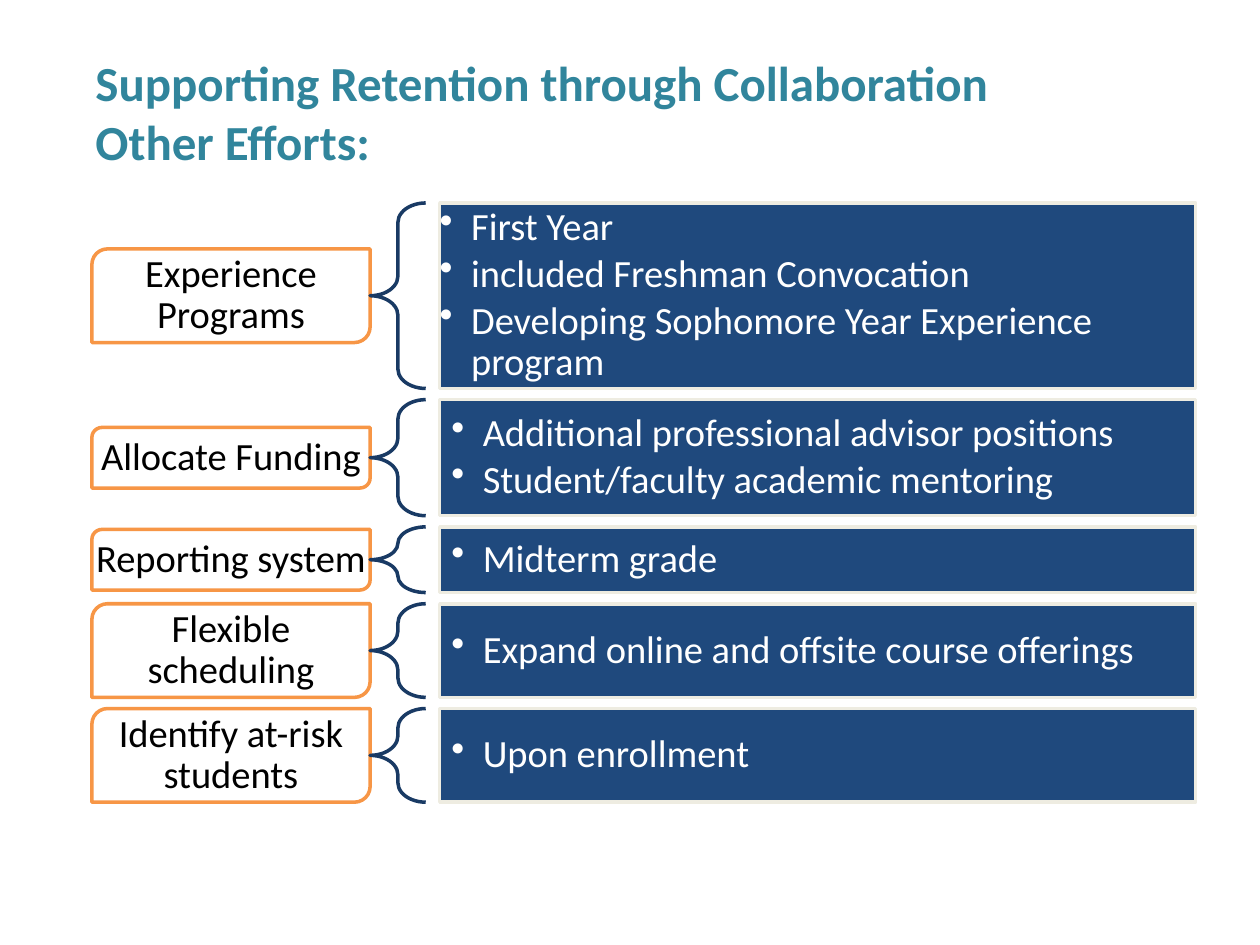
from lxml import etree
from pptx import Presentation
from pptx.dml.color import RGBColor
from pptx.enum.shapes import MSO_SHAPE
from pptx.enum.text import MSO_ANCHOR, PP_ALIGN
from pptx.oxml.ns import qn
from pptx.util import Pt

LABEL, BRACE, BOX = MSO_SHAPE.ROUND_2_DIAG_RECTANGLE, MSO_SHAPE.LEFT_BRACE, MSO_SHAPE.RECTANGLE
TOP, MIDDLE = MSO_ANCHOR.TOP, MSO_ANCHOR.MIDDLE
LEFT, CENTER = PP_ALIGN.LEFT, PP_ALIGN.CENTER

FONT = "Calibri"
COLORS = {"title": "31859C", "white": "FFFFFF", "black": "000000", "orange": "F79646",
          "brace": "193A64", "navy": "1F497D", "cream": "EEECE1"}

TITLE = ["Supporting Retention through Collaboration", "Other Efforts:"]
# label, label height, row height, box inset, bullets
EFFORTS = [
    ("Experience Programs", 53.5, 106, 0,
     ["First Year", "included Freshman Convocation",
      "Developing Sophomore Year Experience program"]),
    ("Allocate Funding", 34.6, 66.3, 6.6,
     ["Additional professional advisor positions", "Student/faculty academic mentoring"]),
    ("Reporting system", 34.6, 37.5, 6.6, ["Midterm grade"]),
    ("Flexible scheduling", 53.5, 53.5, 6.6, ["Expand online and offsite course offerings"]),
    ("Identify at-risk students", 53.5, 53.5, 6.6, ["Upon enrollment"]),
]
ROWS_TOP, ROW_GAP = 116, 6.4
LABEL_X, LABEL_W = 52.5, 159
BRACE_X, BRACE_W = LABEL_X + LABEL_W, 31.8
BOX_X, BOX_W = 251.3, 432


def rgb(name):
    return RGBColor.from_string(COLORS[name])


def add_outlined(kind, x, y, w, h, line, fill=None):
    sp = slide.shapes.add_shape(kind, Pt(x), Pt(y), Pt(w), Pt(h))
    sp.shadow.inherit = False
    if fill:
        sp.fill.solid()
        sp.fill.fore_color.rgb = rgb(fill)
    else:
        sp.fill.background()
    sp.line.color.rgb = rgb(line)
    sp.line.width = Pt(2)
    return sp


def add_bullet(p):
    pPr = p._p.get_or_add_pPr()
    pPr.set("marL", str(Pt(18)))
    pPr.set("indent", str(-Pt(18)))
    etree.SubElement(pPr, qn("a:buChar")).set("char", "•")


def write(sp, lines, color, size=22, align=LEFT, anchor=MIDDLE, inset=0,
          bold=False, bullets=False, spacing=0.9, after=0):
    tf = sp.text_frame
    tf.word_wrap = True
    tf.vertical_anchor = anchor
    tf.margin_left = tf.margin_right = tf.margin_top = tf.margin_bottom = Pt(inset)
    for i, line in enumerate(lines):
        p = tf.paragraphs[0] if i == 0 else tf.add_paragraph()
        p.alignment = align
        p.line_spacing = spacing
        p.space_after = Pt(after)
        if bullets:
            add_bullet(p)
        r = p.add_run()
        r.text = line
        r.font.name, r.font.size, r.font.bold = FONT, Pt(size), bold
        r.font.color.rgb = rgb(color)


prs = Presentation()
prs.slide_width, prs.slide_height = Pt(720), Pt(540)
slide = prs.slides.add_slide(prs.slide_layouts[6])

title = slide.shapes.add_textbox(Pt(47.5), Pt(26.6), Pt(631.5), Pt(57.6))
write(title, TITLE, "title", size=28, anchor=TOP, bold=True, spacing=1.0)
title.text_frame.margin_left = title.text_frame.margin_right = Pt(7.2)
title.text_frame.margin_top = Pt(3.6)

y = ROWS_TOP
for label, label_h, row_h, inset, bullets in EFFORTS:
    sp = add_outlined(LABEL, LABEL_X, y + (row_h - label_h) / 2, LABEL_W, label_h,
                      "orange", "white")
    write(sp, [label], "black", align=CENTER)

    brace = add_outlined(BRACE, BRACE_X, y, BRACE_W, row_h, "brace")
    brace.adjustments[0] = 0.35

    box = add_outlined(BOX, BOX_X, y, BOX_W, row_h, "cream", "navy")
    write(box, bullets, "white", inset=inset, bullets=True, after=3)
    y += row_h + ROW_GAP

prs.save("out.pptx")
